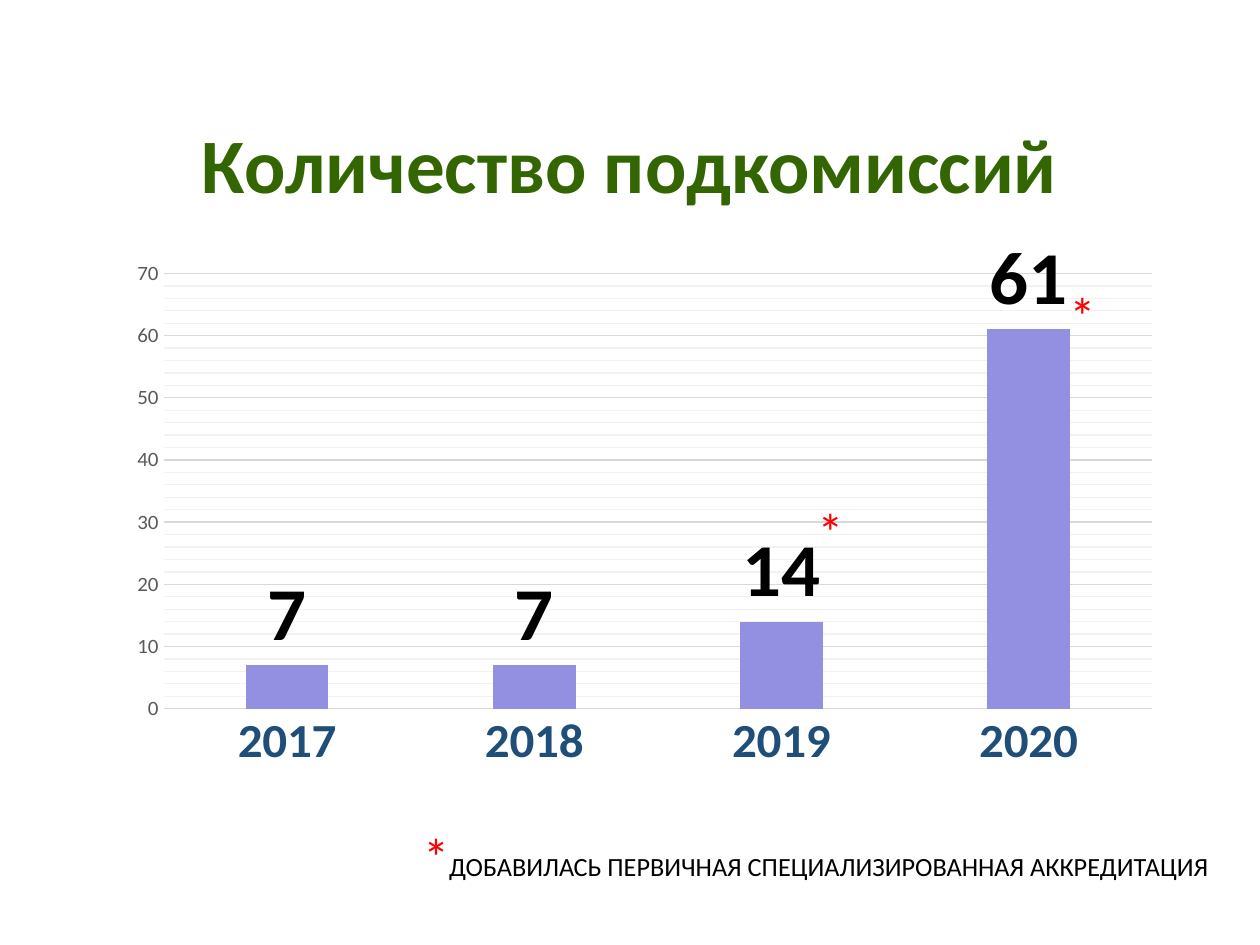
from copy import deepcopy

from pptx import Presentation
from pptx import util as u
from pptx.chart.data import CategoryChartData
from pptx.dml.color import RGBColor
from pptx.enum import chart as ch, text as t
from pptx.oxml import ns

FONT = "Calibri"
RED, BLACK, GREY = "FF0000", "000000", "D9D9D9"

# Content: text boxes as (left, top, width, height in cm), runs
title = ((1.75, 1.55, 21.9, 3.68),
         [("Количество подкомиссий", dict(size=44, bold=True, color="336600"))])
star = ("*", dict(size=30, color=RED))
notes = [
    ((16.23, 9.93, 1.04, 1.55), [star]),
    ((21.31, 5.59, 1.04, 1.55), [star]),
    ((8.28, 16.48, 16.51, 1.55),
     [star, ("ДОБАВИЛАСЬ ПЕРВИЧНАЯ СПЕЦИАЛИЗИРОВАННАЯ АККРЕДИТАЦИЯ",
             dict(size=15, color=BLACK))]),
]
subcommissions = {"2017": 7, "2018": 7, "2019": 14, "2020": 61}
chart_place = (2.34, 4.7, 21.31, 11.05)


def rgb(value):
    return RGBColor.from_string(value)


def set_attributes(target, values):
    for name, value in values.items():
        setattr(target, name, value)


def set_font(font, size, color, bold=False):
    set_attributes(font, dict(name=FONT, size=u.Pt(size), bold=bold))
    font.color.rgb = rgb(color)


def set_line(line, color):
    line.color.rgb = rgb(color)
    line.width = u.Pt(0.75)


def add_text(place, runs, frame_format, paragraph_format):
    frame = slide.shapes.add_textbox(*map(u.Cm, place)).text_frame
    set_attributes(frame, frame_format)
    paragraph = frame.paragraphs[0]
    set_attributes(paragraph, paragraph_format)
    for wording, style in runs:
        run = paragraph.add_run()
        run.text = wording
        set_font(run.font, **style)


deck = Presentation()
set_attributes(deck, dict(slide_width=u.Cm(25.4), slide_height=u.Cm(19.05)))
slide = deck.slides.add_slide(deck.slide_layouts[6])

# Title
add_text(*title, dict(word_wrap=True, vertical_anchor=t.MSO_ANCHOR.MIDDLE),
         dict(alignment=t.PP_ALIGN.CENTER, line_spacing=0.9))

# Column chart
chart_data = CategoryChartData()
chart_data.categories = list(subcommissions)
chart_data.add_series("Series 1", list(subcommissions.values()))
chart = slide.shapes.add_chart(ch.XL_CHART_TYPE.COLUMN_CLUSTERED,
                               *map(u.Cm, chart_place), chart_data).chart
set_attributes(chart, dict(has_legend=False, has_title=False))
set_font(chart.font, 10, BLACK)

columns = chart.plots[0]
set_attributes(columns, dict(gap_width=199, vary_by_categories=False,
                             has_data_labels=True))
column_fill = columns.series[0].format.fill
column_fill.solid()
column_fill.fore_color.rgb = rgb("938FE1")
set_attributes(columns.data_labels, dict(
    show_value=True, position=ch.XL_LABEL_POSITION.OUTSIDE_END))
set_font(columns.data_labels.font, 44, BLACK, bold=True)

# Axes
years, counts = chart.category_axis, chart.value_axis
for axis in (years, counts):
    set_attributes(axis, dict(major_tick_mark=ch.XL_TICK_MARK.NONE,
                              minor_tick_mark=ch.XL_TICK_MARK.NONE))
set_font(years.tick_labels.font, 28, "1F4E79", bold=True)
set_line(years.format.line, GREY)
set_font(counts.tick_labels.font, 12, "595959")
set_attributes(counts, dict(minimum_scale=0, maximum_scale=70, major_unit=10,
                            minor_unit=2, has_major_gridlines=True,
                            has_minor_gridlines=True))
counts.format.line.fill.background()

# Gridlines: the minor ones take a paler copy of the major line format
grid_line = counts.major_gridlines.format.line
set_line(grid_line, "F2F2F2")
axis_xml = chart.element.find(".//" + ns.qn("c:valAx"))
major, minor = (axis_xml.find(ns.qn(tag))
                for tag in ("c:majorGridlines", "c:minorGridlines"))
minor.append(deepcopy(major.find(ns.qn("c:spPr"))))
set_line(grid_line, GREY)

# Asterisks and footnote
for place, runs in notes:
    add_text(place, runs, dict(word_wrap=False,
                               auto_size=t.MSO_AUTO_SIZE.SHAPE_TO_FIT_TEXT), {})

deck.save("out.pptx")
